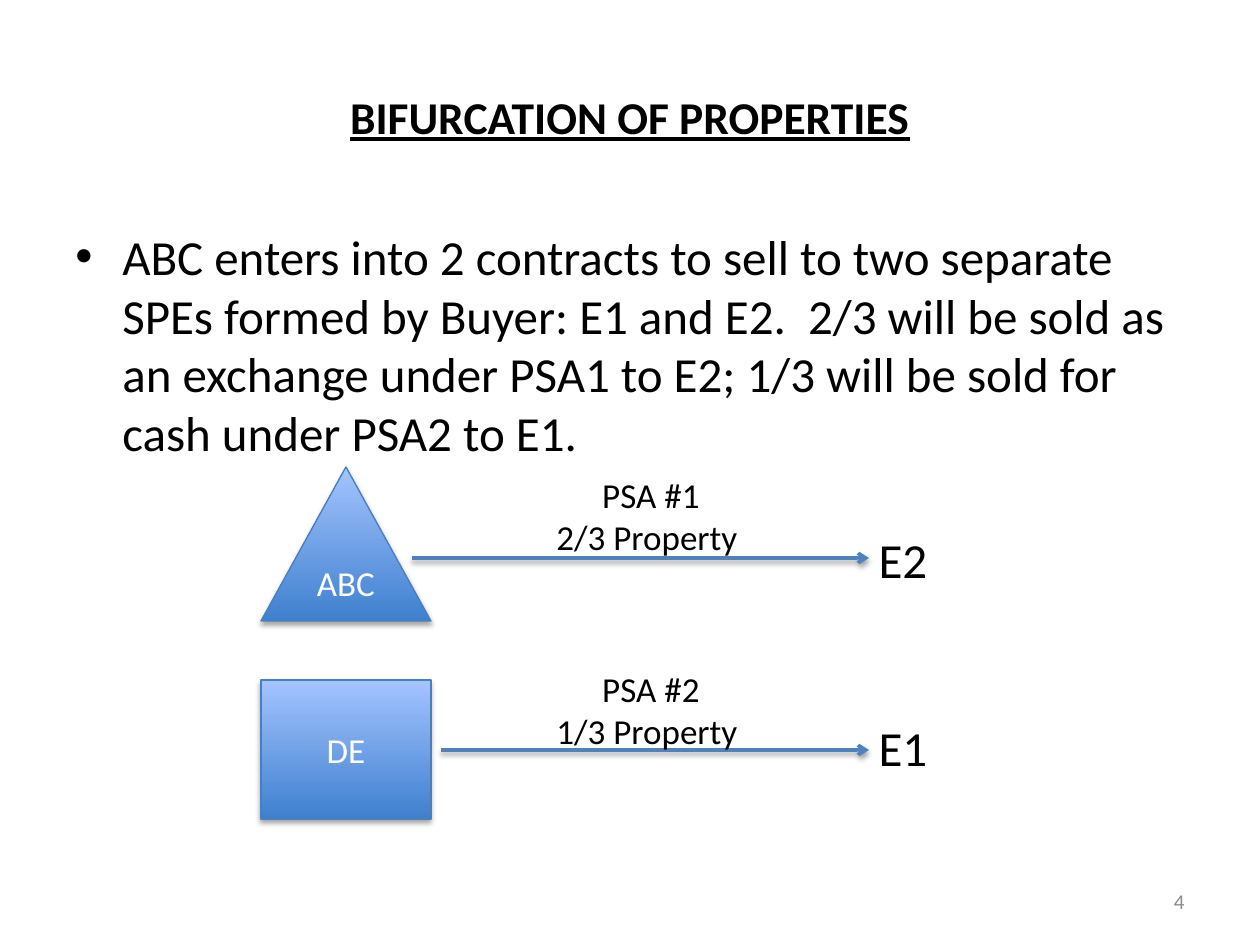
import pptx
import pptx.util
import pptx.dml.color
import pptx.enum.dml
import pptx.enum.shapes
import pptx.enum.text
import pptx.oxml
import pptx.oxml.ns

Pt = pptx.util.Pt
ALIGN = pptx.enum.text.PP_ALIGN
ANCHOR = pptx.enum.text.MSO_ANCHOR
SHAPE = pptx.enum.shapes.MSO_SHAPE
FONT = "Calibri"
COLORS = {"text": "000000", "white": "FFFFFF", "number": "8C8C8C", "top": "A4C4FF",
          "bottom": "3F80CE", "edge": "4B7EBC", "arrow": "4F81BD"}

# Content: lengths in px, 126 to the inch
TITLE = "BIFURCATION OF PROPERTIES"
BODY = ("ABC enters into 2 contracts to sell to two separate SPEs formed by Buyer: "
        "E1 and E2.  2/3 will be sold as an exchange under PSA1 to E2; "
        "1/3 will be sold for cash under PSA2 to E1.")
PAGE = "4"
SALES = [
    {"seller": "ABC", "shape": SHAPE.ISOSCELES_TRIANGLE, "top": 467, "height": 154,
     "label": "PSA #1\n2/3 Property ", "label_top": 467,
     "start": 412, "arrow_y": 558, "buyer": "E2", "buyer_top": 523},
    {"seller": "DE", "shape": SHAPE.RECTANGLE, "top": 680, "height": 139,
     "label": "PSA #2\n1/3 Property ", "label_top": 661,
     "start": 441, "arrow_y": 750, "buyer": "E1", "buyer_top": 711},
]
SELLER_X, SELLER_W = 261, 170
LABEL_X, BUYER_X, TEXT_W = 537, 789, 228
ARROW_END = 869


def px(n):
    return round(n * 914400 / 126)


def rgb(name):
    return pptx.dml.color.RGBColor.from_string(COLORS[name])


def put_text(sp, text, size, color="text", align=ALIGN.CENTER, anchor=ANCHOR.TOP):
    tf = sp.text_frame
    tf.word_wrap = True
    tf.vertical_anchor = anchor
    tf.text = text
    for p in tf.paragraphs:
        p.alignment = align
        for r in p.runs:
            r.font.name = FONT
            r.font.size = Pt(size)
            r.font.color.rgb = rgb(color)
    return tf.paragraphs[0]


def add_text(s, box, text, size, **style):
    return put_text(s.shapes.add_textbox(*map(px, box)), text, size, **style)


def add_shadow(sp, distance, alpha):
    sp._element.spPr.append(pptx.oxml.parse_xml(
        f'<a:effectLst {pptx.oxml.ns.nsdecls("a")}>'
        f'<a:outerShdw blurRad="{Pt(3.1)}" dist="{Pt(distance)}" dir="5400000" rotWithShape="0">'
        f'<a:srgbClr val="000000"><a:alpha val="{alpha * 1000}"/></a:srgbClr>'
        '</a:outerShdw></a:effectLst>'))


def add_seller(s, sale):
    sp = s.shapes.add_shape(sale["shape"], px(SELLER_X), px(sale["top"]),
                            px(SELLER_W), px(sale["height"]))
    sp.fill.gradient()
    sp.fill.gradient_angle = 90
    for stop, name in zip(sp.fill.gradient_stops, ("bottom", "top")):
        stop.color.rgb = rgb(name)
    sp.line.color.rgb = rgb("edge")
    sp.line.width = Pt(0.75)
    add_shadow(sp, 1.8, 35)
    put_text(sp, sale["seller"], 20, color="white", anchor=ANCHOR.MIDDLE)


def add_arrow(s, start, end, y):
    line = s.shapes.add_connector(pptx.enum.shapes.MSO_CONNECTOR.STRAIGHT,
                                  px(start), px(y), px(end), px(y))
    line.line.color.rgb = rgb("arrow")
    line.line.width = Pt(2)
    line.line._get_or_add_ln().append(pptx.oxml.parse_xml(
        f'<a:tailEnd {pptx.oxml.ns.nsdecls("a")} type="arrow"/>'))
    add_shadow(line, 1.6, 38)


def main():
    prs = pptx.Presentation()
    prs.slide_width, prs.slide_height = px(1260), px(945)
    s = prs.slides.add_slide(prs.slide_layouts[6])

    # Title
    p = add_text(s, (63, 38, 1134, 157), TITLE, 26, anchor=ANCHOR.MIDDLE)
    p.runs[0].font.bold = True
    p.runs[0].font.underline = True

    # Bulleted statement
    p = add_text(s, (63, 220, 1134, 624), BODY, 28, align=ALIGN.LEFT)
    p.space_before, p.space_after = Pt(5.6), Pt(6)
    pPr = p._p.get_or_add_pPr()
    pPr.set("marL", str(px(47)))
    pPr.set("indent", str(-px(47)))
    for xml in ('<a:buFont {} typeface="Arial"/>', '<a:buChar {} char="•"/>'):
        pPr.append(pptx.oxml.parse_xml(xml.format(pptx.oxml.ns.nsdecls("a"))))

    # Page number
    add_text(s, (903, 876, 294, 50), PAGE, 12, color="number",
             align=ALIGN.RIGHT, anchor=ANCHOR.MIDDLE)

    # Seller, arrow, contract and buyer of each sale
    for sale in SALES:
        add_seller(s, sale)
        add_arrow(s, sale["start"], ARROW_END, sale["arrow_y"])
        add_text(s, (LABEL_X, sale["label_top"], TEXT_W, 136), sale["label"], 20)
        add_text(s, (BUYER_X, sale["buyer_top"], TEXT_W, 111), sale["buyer"], 28)

    prs.save("out.pptx")


if __name__ == "__main__":
    main()
